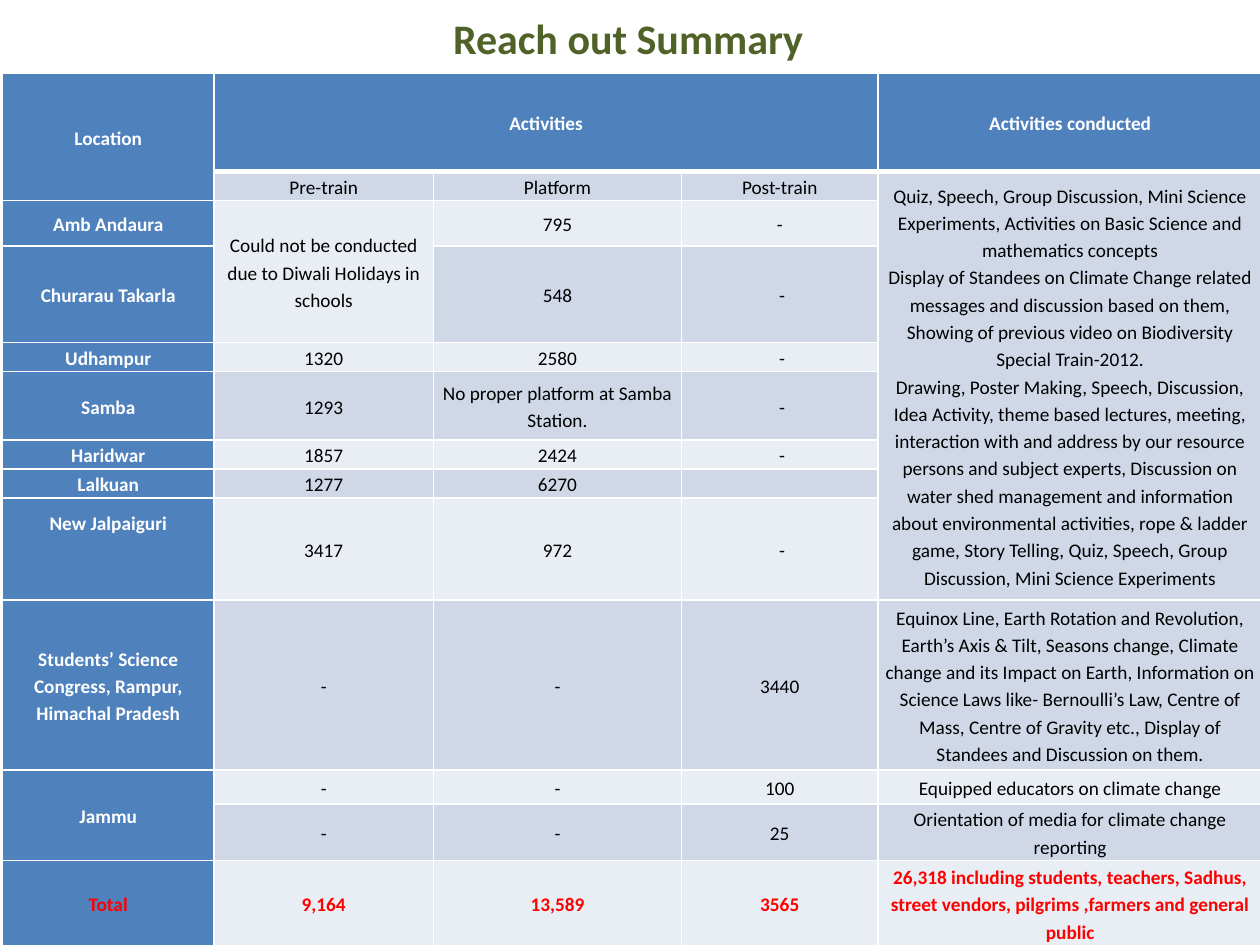
from lxml import etree
from pptx import Presentation
from pptx.dml.color import RGBColor
from pptx.enum.text import MSO_ANCHOR, MSO_AUTO_SIZE, PP_ALIGN
from pptx.oxml.ns import qn
from pptx.util import Pt

CENTER, RIGHT = PP_ALIGN.CENTER, PP_ALIGN.RIGHT
MIDDLE, NO_FIT = MSO_ANCHOR.MIDDLE, MSO_AUTO_SIZE.NONE

FONT = "Calibri"
WHITE, BLACK, RED, GREEN = "FFFFFF", "000000", "FF0000", "4F6228"
BLUE, DARK_BAND, LIGHT_BAND = "4F81BD", "D0D8E8", "E9EDF4"
BODY_SIZE = 11

TITLE = "Reach out Summary "
TRAIN_ACTIVITIES = [
    "Quiz, Speech, Group Discussion, Mini Science Experiments, Activities on Basic "
    "Science and mathematics concepts",
    "Display of Standees on Climate Change related messages and discussion based on "
    "them, Showing of previous video on Biodiversity Special Train-2012.",
    "Drawing, Poster Making, Speech, Discussion, Idea Activity, theme based lectures, "
    "meeting, interaction with and address by our resource persons and subject experts, "
    "Discussion on water shed management and information about environmental "
    "activities, rope & ladder game, Story Telling, Quiz, Speech, Group Discussion, "
    "Mini Science Experiments",
]
CONGRESS_ACTIVITIES = [
    "Equinox Line, Earth Rotation and Revolution,",
    "Earth’s Axis & Tilt, Seasons change, Climate change and its Impact on Earth, "
    "Information on Science Laws like- Bernoulli’s Law, Centre of Mass, Centre of "
    "Gravity etc., Display of Standees and Discussion on them.",
]
ROWS = [
    (56.2, ["Location", "Activities", "", "", "Activities conducted"]),
    (16.6, ["", "Pre-train", "Platform", "Post-train", TRAIN_ACTIVITIES]),
    (25.9, ["Amb Andaura", "Could not be conducted due to Diwali Holidays in schools",
            "795", " - ", ""]),
    (55.4, ["Churarau Takarla", "", "548", " -", ""]),
    (16.6, ["Udhampur", "1320", "2580", " -", ""]),
    (38.9, ["Samba", "1293", "No proper platform at Samba Station.", " -", ""]),
    (16.6, ["Haridwar", "1857", "2424", " -", ""]),
    (16.6, ["Lalkuan", "1277", "6270", "", ""]),
    (58.3, ["New Jalpaiguri", "3417", "972", " -", ""]),
    (97.2, ["Students’ Science Congress, Rampur, Himachal Pradesh", "-", "-", "3440",
            CONGRESS_ACTIVITIES]),
    (19.4, ["Jammu", "-", "-", "100", "Equipped educators on climate change"]),
    (32.4, ["", "-", "-", "25", "Orientation of media for climate change reporting"]),
    (49, ["Total", "9,164", "13,589", "3565",
          "26,318 including students, teachers, Sadhus, street vendors, pilgrims "
          ",farmers and general public"]),
]
COLUMN_WIDTHS = [121, 125.3, 141.8, 112.3, 219.6]
MERGES = [((0, 0), (1, 0)), ((0, 1), (0, 3)), ((1, 4), (8, 4)),
          ((2, 1), (3, 1)), ((10, 0), (11, 0))]
HEADER_END = [(0, column) for column in range(1, 5)] + [(1, 0)]
JALPAIGURI, TOTAL = 8, len(ROWS) - 1
CELL_FORMAT = {"margin_left": Pt(3.6), "margin_right": Pt(3.6), "margin_top": 0,
               "margin_bottom": 0, "vertical_anchor": MIDDLE}
TITLE_BOX = {"left": Pt(195.8), "top": Pt(3.6), "width": Pt(275.8), "height": Pt(36)}


def colour(value):
    return RGBColor.from_string(value)


def set_all(target, values):
    for name, value in values.items():
        setattr(target, name, value)


def style_font(font, size, shade, bold):
    set_all(font, {"name": FONT, "size": Pt(size), "bold": bold})
    font.color.rgb = colour(shade)


def add_borders(cell, bottom):
    properties = cell._tc.get_or_add_tcPr()
    for index, (side, width) in enumerate([("L", 1), ("R", 1), ("T", 1), ("B", bottom)]):
        line = etree.Element(qn(f"a:ln{side}"), w=str(Pt(width)))
        fill = etree.SubElement(line, qn("a:solidFill"))
        etree.SubElement(fill, qn("a:srgbClr"), val=WHITE)
        properties.insert(index, line)


def fill_cell(cell, row, column, content):
    heading = row == 0 or column == 0
    set_all(cell, CELL_FORMAT)
    cell.fill.solid()
    band = DARK_BAND if row % 2 else LIGHT_BAND
    cell.fill.fore_color.rgb = colour(BLUE if heading else band)
    add_borders(cell, 3 if (row, column) in HEADER_END else 1)
    shade = RED if row == TOTAL else WHITE if heading else BLACK
    lines = content if isinstance(content, list) else [content]
    for index, line in enumerate(lines):
        frame = cell.text_frame
        para = frame.add_paragraph() if index else frame.paragraphs[0]
        set_all(para, {"alignment": CENTER, "line_spacing": 1.15})
        if line:
            span = para.add_run()
            span.text = line
            style_font(span.font, BODY_SIZE, shade, heading or row == TOTAL)
        else:
            etree.SubElement(para._p, qn("a:endParaRPr"), sz=str(BODY_SIZE * 100))


def add_summary(page):
    heights = [height for height, _ in ROWS]
    frame = page.shapes.add_table(len(ROWS), len(COLUMN_WIDTHS), Pt(1.4), Pt(41.8),
                                  Pt(sum(COLUMN_WIDTHS)), Pt(sum(heights)))
    table = frame.table
    for column, width in zip(table.columns, COLUMN_WIDTHS):
        column.width = Pt(width)
    for row, (height, contents) in enumerate(ROWS):
        table.rows[row].height = Pt(height)
        for column, content in enumerate(contents):
            fill_cell(table.cell(row, column), row, column, content)
    table.cell(JALPAIGURI, 0).margin_bottom = Pt(31)
    for first, last in MERGES:
        table.cell(*first).merge(table.cell(*last))


def add_title(page):
    box = page.shapes.title
    set_all(box, TITLE_BOX)
    set_all(box.text_frame, {"auto_size": NO_FIT, "word_wrap": True,
                             "vertical_anchor": MIDDLE})
    para = box.text_frame.paragraphs[0]
    para.alignment = RIGHT
    span = para.add_run()
    span.text = TITLE
    style_font(span.font, 24, GREEN, True)


def main():
    deck = Presentation()
    set_all(deck, {"slide_width": Pt(720), "slide_height": Pt(540)})
    page = deck.slides.add_slide(deck.slide_layouts[5])
    add_summary(page)
    add_title(page)
    deck.save("out.pptx")


if __name__ == "__main__":
    main()
